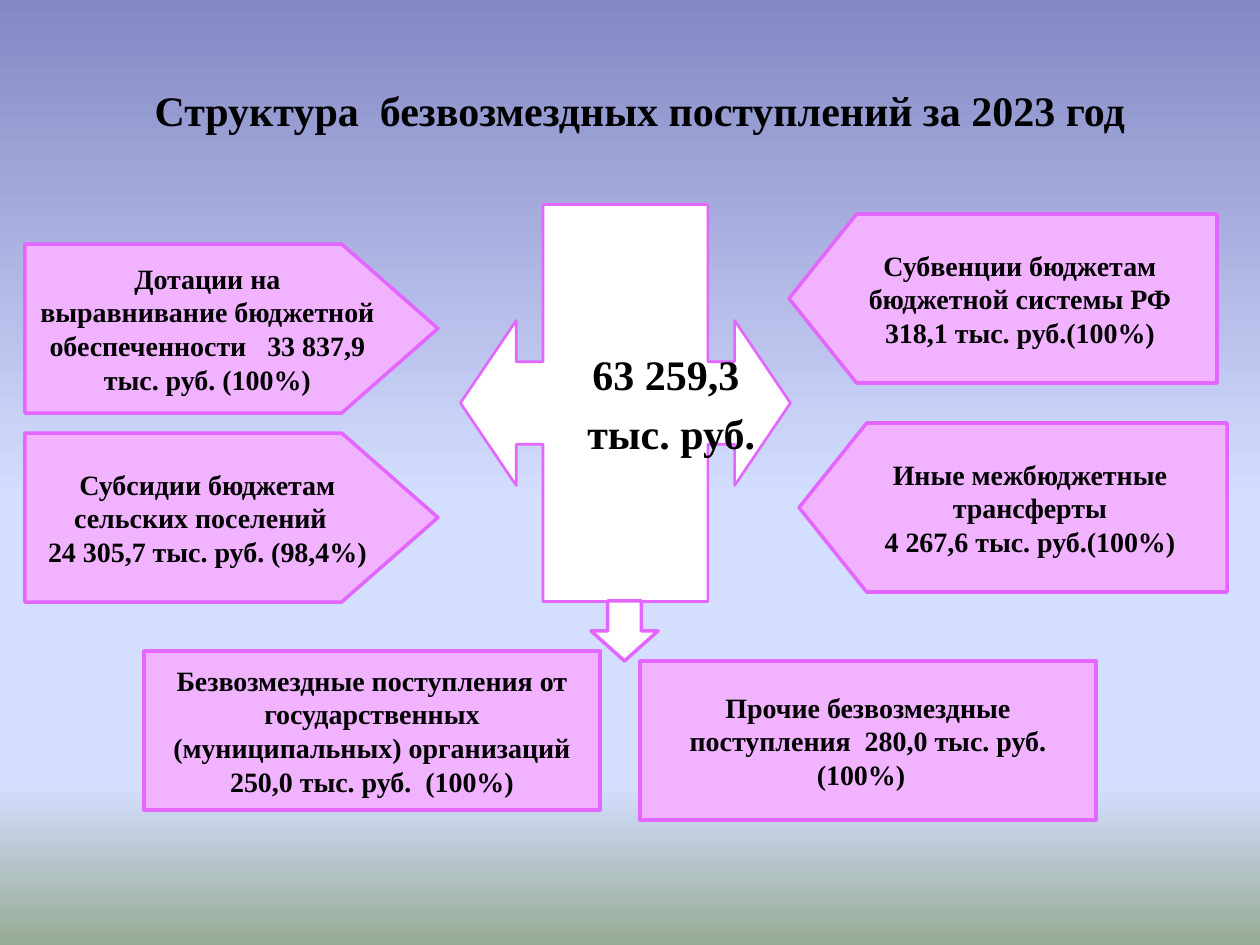
"""Build a slide showing the structure of gratuitous budget receipts for 2023."""
from dataclasses import dataclass

from lxml.etree import SubElement
from pptx import Presentation
from pptx.dml.color import RGBColor
from pptx.enum.shapes import MSO_SHAPE
from pptx.enum.text import MSO_ANCHOR, MSO_AUTO_SIZE, PP_ALIGN
from pptx.oxml.ns import qn
from pptx.util import Pt

PX = 914400 / 126


@dataclass(frozen=True)
class Theme:
    font: str = "Times New Roman"
    text: str = "000000"
    pink: str = "F1B2FF"
    white: str = "FFFFFF"
    edge: str = "E366FF"
    sky: tuple = ((0, "8488C4"), (53, "D4DEFF"), (83, "D4DEFF"), (100, "96AB94"))
    large: int = 24
    small: int = 16


THEME = Theme()


def px(n):
    return round(n * PX)


def place(sp, x, y, w, h):
    sp.left, sp.top, sp.width, sp.height = px(x), px(y), px(w), px(h)


def paint(sp, fill, width):
    sp.fill.solid()
    sp.fill.fore_color.rgb = RGBColor.from_string(fill)
    sp.line.color.rgb = RGBColor.from_string(THEME.edge)
    sp.line.width = Pt(width)


def write(sp, lines, size, anchor=MSO_ANCHOR.MIDDLE):
    tf = sp.text_frame
    tf.auto_size = MSO_AUTO_SIZE.NONE
    tf.word_wrap = True
    tf.vertical_anchor = anchor
    for i, line in enumerate(lines):
        p = tf.add_paragraph() if i else tf.paragraphs[0]
        p.alignment = PP_ALIGN.CENTER
        r = p.add_run()
        r.text = line
        r.font.name = THEME.font
        r.font.size = Pt(size)
        r.font.bold = True
        r.font.color.rgb = RGBColor.from_string(THEME.text)
    return tf


def set_background(s):
    fill = s.background.fill
    fill.gradient()
    fill.gradient_angle = 270
    stops = next(s.element.iter(qn("a:gsLst")))
    stops.clear()
    for pos, color in THEME.sky:
        gs = SubElement(stops, qn("a:gs"), pos=str(pos * 1000))
        SubElement(gs, qn("a:srgbClr"), val=color)


def add_title(s, text):
    sp = s.shapes.title
    place(sp, 94, 66, 1102, 69)
    tf = write(sp, [text], THEME.large, MSO_ANCHOR.BOTTOM)
    tf.margin_left = tf.margin_right = tf.margin_bottom = 0


def add_total(s, lines):
    sp = s.placeholders[1]
    place(sp, 427, 238, 397, 330)
    sp.rotation = 270
    geom = SubElement(sp.element.spPr, qn("a:prstGeom"), prst="upDownArrowCallout")
    guides = SubElement(geom, qn("a:avLst"))
    for i, value in enumerate((25000, 25000, 16900, 50000), 1):
        SubElement(guides, qn("a:gd"), name=f"adj{i}", fmla=f"val {value}")
    paint(sp, THEME.white, 1.5)
    tf = write(sp, lines, THEME.large)
    tf.word_wrap = False
    sp.element.txBody.bodyPr.set("vert", "eaVert")
    for p in tf.paragraphs:
        pPr = p._p.get_or_add_pPr()
        pPr.set("marL", str(px(38)))
        pPr.set("indent", str(-px(38)))
        SubElement(pPr, qn("a:buNone"))


def add_block(s, kind, box, lines=(), fill=THEME.pink):
    sp = s.shapes.add_shape(kind, 0, 0, 0, 0)
    place(sp, *box)
    sp.shadow.inherit = False
    paint(sp, fill, 2)
    if lines:
        write(sp, lines, THEME.small)
    return sp


def add_pentagon(s, box, lines, adj, to_left=False):
    sp = add_block(s, MSO_SHAPE.PENTAGON, box, lines)
    sp.adjustments[0] = adj
    if to_left:
        sp.rotation = 180
        sp.element.txBody.bodyPr.set("rot", str(180 * 60000))


def main():
    prs = Presentation()
    prs.slide_width, prs.slide_height = px(1260), px(945)
    s = prs.slides.add_slide(prs.slide_layouts[1])
    set_background(s)
    add_title(s, "Структура  безвозмездных поступлений за 2023 год ")
    add_total(s, ["63 259,3 ", "тыс. руб."])

    grants = ["Дотации на выравнивание бюджетной обеспеченности   33 837,9 тыс. руб. (100%)"]
    subsidies = ["Субсидии бюджетам сельских поселений  ", "24 305,7 тыс. руб. (98,4%)"]
    for y, lines in ((244, grants), (433, subsidies)):
        add_pentagon(s, (25, y, 413, 169), lines, 0.57)

    subventions = ["Субвенции бюджетам бюджетной системы РФ", "318,1 тыс. руб.(100%)"]
    transfers = ["Иные межбюджетные трансферты", "4 267,6 тыс. руб.(100%)"]
    for x, y, lines in ((789, 214, subventions), (799, 423, transfers)):
        add_pentagon(s, (x, y, 428, 169), lines, 0.4, to_left=True)

    organisations = ["Безвозмездные поступления от государственных (муниципальных) "
                     "организаций 250,0 тыс. руб.  (100%)"]
    others = ["Прочие безвозмездные поступления  280,0 тыс. руб. (100%)  "]
    for x, y, lines in ((144, 651, organisations), (640, 661, others)):
        add_block(s, MSO_SHAPE.RECTANGLE, (x, y, 456, 159), lines)
    add_block(s, MSO_SHAPE.DOWN_ARROW, (591, 601, 67, 60), fill=THEME.white)
    prs.save("out.pptx")


if __name__ == "__main__":
    main()
